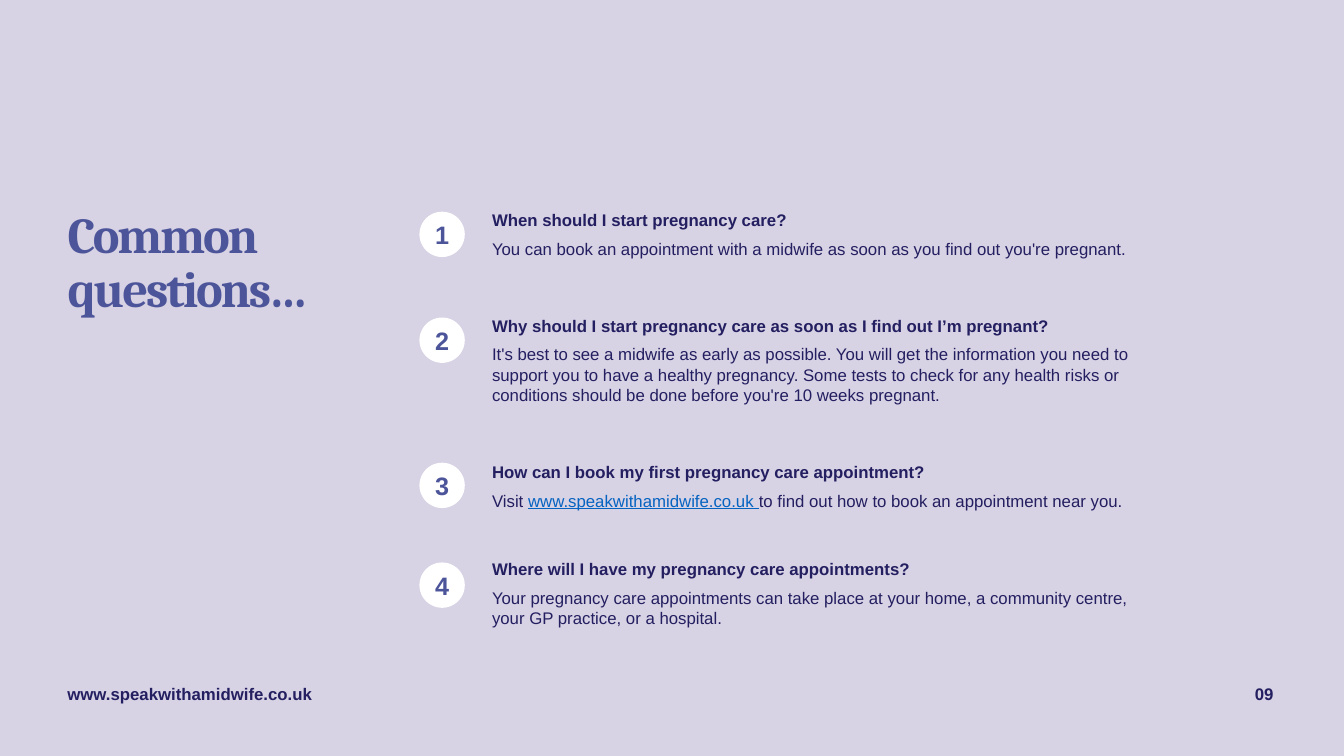
import pptx
import pptx.dml.color
import pptx.enum.shapes
import pptx.enum.text
import pptx.oxml.ns
import pptx.util
from lxml import etree

LAVENDER = pptx.dml.color.RGBColor(0xD7, 0xD2, 0xE4)
INDIGO = pptx.dml.color.RGBColor(0x4D, 0x55, 0x9A)
NAVY = pptx.dml.color.RGBColor(0x23, 0x1F, 0x60)
LINK_BLUE = pptx.dml.color.RGBColor(0x05, 0x63, 0xC1)
WHITE = pptx.dml.color.RGBColor(0xFF, 0xFF, 0xFF)

WIDTH, HEIGHT = 13.33, 7.5
MARGIN = 0.57
CONTENT_TOP = 2.03
FOOTER_TOP = 6.73
BADGE_SIZE = 0.45
SITE = "www.speakwithamidwife.co.uk"

QUESTIONS = [
    (0.07, 0, "When should I start pregnancy care?",
     ["You can book an appointment with a midwife as soon as you find out you're pregnant."]),
    (1.12, 40.8, "Why should I start pregnancy care as soon as I find out I’m pregnant?",
     ["It's best to see a midwife as early as possible. You will get the information you need to "
      "support you to have a healthy pregnancy. Some tests to check for any health risks or "
      "conditions should be done before you're 10 weeks pregnant."]),
    (2.56, 40.8, "How can I book my first pregnancy care appointment?",
     ["Visit ", SITE + " ", "to find out how to book an appointment near you."]),
    (3.55, 34.8, "Where will I have my pregnancy care appointments?",
     ["Your pregnancy care appointments can take place at your home, a community centre, \n"
      "your GP practice, or a hospital."]),
]


def place(shape, box):
    shape.left, shape.top, shape.width, shape.height = map(pptx.util.Inches, box)


def prepare_frame(shape, wrap=True, anchor=pptx.enum.text.MSO_ANCHOR.TOP):
    frame = shape.text_frame
    frame.word_wrap = wrap
    frame.auto_size = pptx.enum.text.MSO_AUTO_SIZE.NONE
    frame.vertical_anchor = anchor
    return frame


def add_text(paragraph, text, size=12, color=NAVY, bold=False, font="Arial",
             underline=False, tracking=None, align=pptx.enum.text.PP_ALIGN.LEFT):
    paragraph.alignment = align
    for index, line in enumerate(text.split("\n")):
        if index:
            paragraph.add_line_break()
        run = paragraph.add_run()
        run.text = line
        run.font.size = pptx.util.Pt(size)
        run.font.name = font
        run.font.bold = bold
        run.font.underline = underline
        run.font.color.rgb = color
        if tracking is not None:
            run.font._element.set("spc", str(round(tracking * 100)))


def build_title(slide, box):
    title = slide.shapes.title
    place(title, box)
    paragraph = prepare_frame(title).paragraphs[0]
    paragraph.line_spacing = 0.9
    add_text(paragraph, "Common\nquestions…", size=36, color=INDIGO, bold=True,
             font="Cambria", tracking=-1.5)


def add_plain_paragraph(frame, space_before):
    first = frame.paragraphs[0]
    paragraph = frame.add_paragraph() if first.runs else first
    properties = paragraph._p.get_or_add_pPr()
    properties.set("marL", "0")
    properties.set("indent", "0")
    etree.SubElement(properties, pptx.oxml.ns.qn("a:buNone"))
    paragraph.space_before = pptx.util.Pt(space_before)
    return paragraph


def build_badge(slide, number, left, top):
    badge = slide.shapes.add_shape(
        pptx.enum.shapes.MSO_SHAPE.OVAL,
        *map(pptx.util.Inches, (left, top, BADGE_SIZE, BADGE_SIZE)))
    badge.shadow.inherit = False
    badge.fill.solid()
    badge.fill.fore_color.rgb = WHITE
    badge.line.fill.background()
    frame = prepare_frame(badge, wrap=False, anchor=pptx.enum.text.MSO_ANCHOR.MIDDLE)
    frame.margin_left = frame.margin_right = frame.margin_top = frame.margin_bottom = 0
    add_text(frame.paragraphs[0], str(number), size=18, color=INDIGO, bold=True,
             align=pptx.enum.text.PP_ALIGN.CENTER)


def build_questions(slide, box):
    left, top = box[:2]
    body = slide.placeholders[1]
    place(body, box)
    frame = prepare_frame(body)
    for number, (offset, gap, question, answer) in enumerate(QUESTIONS, 1):
        add_text(add_plain_paragraph(frame, gap), question, bold=True)
        paragraph = add_plain_paragraph(frame, 6)
        for part in answer:
            linked = part.strip() == SITE
            add_text(paragraph, part, color=LINK_BLUE if linked else NAVY, underline=linked)
        build_badge(slide, number, left - 0.62, top + offset)


def build_footer(slide, box):
    left, top, width, height = box
    number_width = 1.48
    entries = [
        (SITE, left, 2.66, pptx.enum.text.PP_ALIGN.LEFT),
        ("09", left + width - number_width, number_width, pptx.enum.text.PP_ALIGN.RIGHT),
    ]
    for text, entry_left, entry_width, align in entries:
        text_box = slide.shapes.add_textbox(
            *map(pptx.util.Inches, (entry_left, top, entry_width, height)))
        add_text(prepare_frame(text_box).paragraphs[0], text, bold=True, align=align)


def main():
    presentation = pptx.Presentation()
    presentation.slide_width = pptx.util.Inches(WIDTH)
    presentation.slide_height = pptx.util.Inches(HEIGHT)
    slide = presentation.slides.add_slide(presentation.slide_layouts[1])
    slide.background.fill.solid()
    slide.background.fill.fore_color.rgb = LAVENDER
    build_title(slide, (MARGIN, CONTENT_TOP, 3.75, 1.19))
    build_questions(slide, (4.78, CONTENT_TOP, 7.11, 4.29))
    build_footer(slide, (MARGIN, FOOTER_TOP, WIDTH - 2 * MARGIN - 0.03, 0.3))
    presentation.save("out.pptx")


if __name__ == "__main__":
    main()
